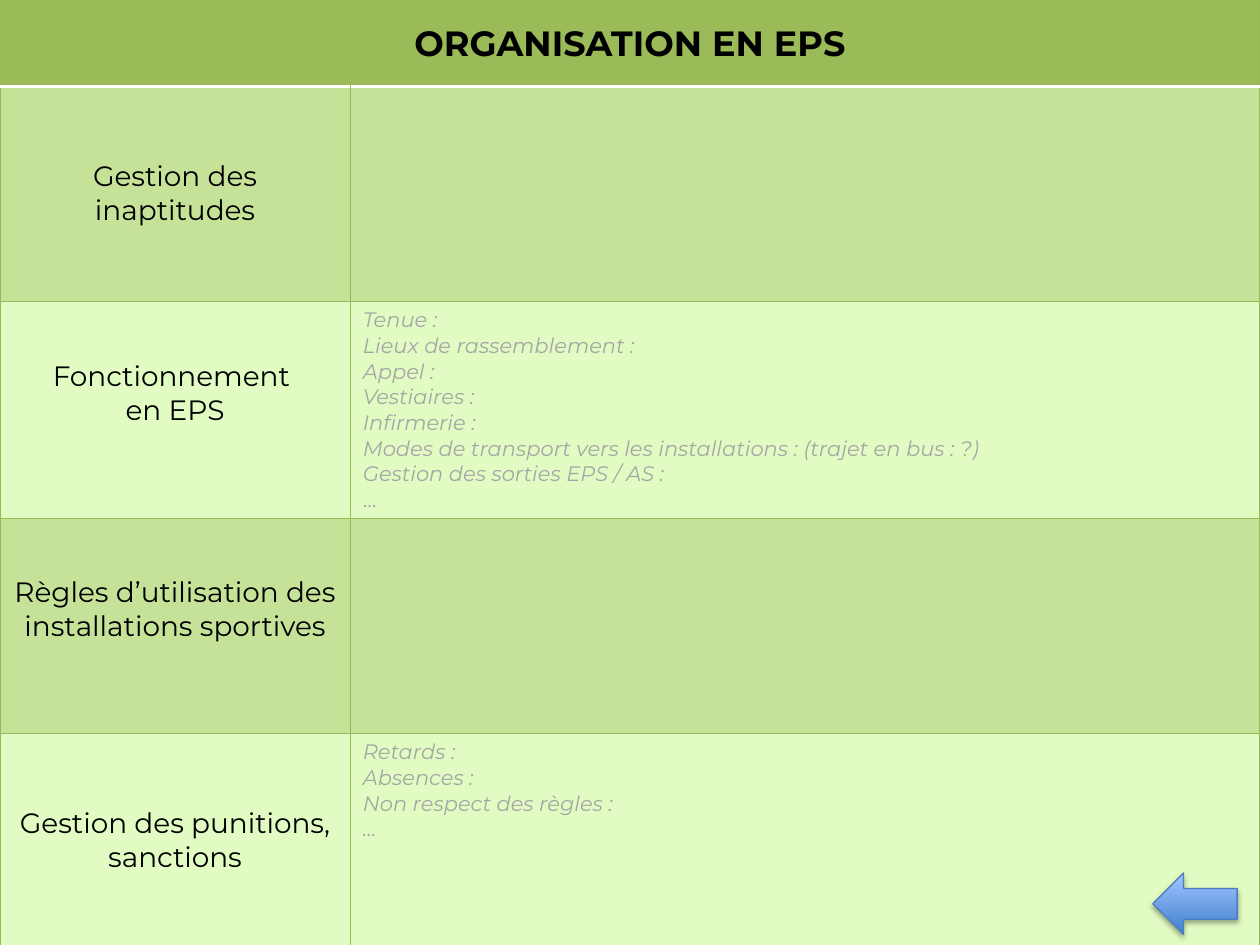
from lxml.etree import SubElement
from pptx import Presentation
from pptx.dml.color import RGBColor
from pptx.enum.shapes import MSO_SHAPE
from pptx.enum.text import MSO_ANCHOR, PP_ALIGN
from pptx.oxml.ns import qn
from pptx.util import Cm, Pt

COLORS = {
    "header": "9BBB59", "dark": "C6E198", "light": "E2FBC2",
    "border": "98B955", "white": "FFFFFF", "text": "000000", "hint": "A6A6A6",
    "arrow_low": "3F80CE", "arrow_high": "A4C4FF", "arrow_line": "4B7EBC",
}
TITLE = {"size": Pt(20), "bold": True, "italic": False}
TOPIC = {"size": Pt(16), "bold": False, "italic": False}
HINT = {"size": Pt(12), "bold": False, "italic": True}


def fill_cell(cell, lines, font_format, color, background, align, anchor):
    cell.fill.solid()
    cell.fill.fore_color.rgb = RGBColor.from_string(COLORS[background])
    cell.vertical_anchor = anchor
    cell.text = "\n".join(lines)
    for paragraph in cell.text_frame.paragraphs:
        paragraph.alignment = align
        for run in paragraph.runs:
            for key, value in font_format.items():
                setattr(run.font, key, value)
            run.font.name = "Montserrat"
            run.font.color.rgb = RGBColor.from_string(COLORS[color])


def add_border(cell, side, color, width):
    line = SubElement(cell._tc.get_or_add_tcPr(), qn(f"a:ln{side}"), w=str(Pt(width)))
    SubElement(SubElement(line, qn("a:solidFill")), qn("a:srgbClr"), val=COLORS[color])


topics = [
    (["Gestion des inaptitudes"], [], 0.13),
    (["Fonctionnement ", "en EPS"],
     ["Tenue :", "Lieux de rassemblement :", "Appel :", "Vestiaires :", "Infirmerie :",
      "Modes de transport vers les installations : (trajet en bus : ?)",
      "Gestion des sorties EPS / AS :", "…"], 0.81),
    (["Règles d’utilisation des installations sportives"], [], 0.81),
    (["Gestion des punitions, sanctions"],
     ["Retards :", "Absences :", "Non respect des règles :", "…"], 0.13),
]

prs = Presentation()
prs.slide_width, prs.slide_height = Cm(25.4), Cm(19.05)
slide = prs.slides.add_slide(prs.slide_layouts[6])

organisation = slide.shapes.add_table(
    len(topics) + 1, 2, Cm(0), Cm(0), Cm(25.4), Cm(19.05)).table
for column, width in zip(organisation.columns, (7.06, 18.34)):
    column.width = Cm(width)
for row_index, row in enumerate(organisation.rows):
    row.height = Cm(4.32 if row_index else 1.75)
    for cell in row.cells:
        for side in "LRTB":
            divider = (row_index, side) in ((0, "B"), (1, "T"))
            add_border(cell, side, "white" if divider else "border", 2 if divider else 0.75)

header = organisation.cell(0, 0)
header.merge(organisation.cell(0, 1))
fill_cell(header, ["ORGANISATION EN EPS"], TITLE, "text", "header",
          PP_ALIGN.CENTER, MSO_ANCHOR.MIDDLE)

for row_index, (topic, hints, bottom) in enumerate(topics, start=1):
    background = "dark" if row_index % 2 else "light"
    topic_cell, hint_cell = organisation.rows[row_index].cells
    fill_cell(topic_cell, topic, TOPIC, "text", background,
              PP_ALIGN.CENTER, MSO_ANCHOR.MIDDLE)
    topic_cell.margin_bottom = Cm(bottom)
    fill_cell(hint_cell, hints, HINT, "hint", background, PP_ALIGN.LEFT, MSO_ANCHOR.TOP)
    if hints and row_index == 2:
        hint_cell.text_frame.paragraphs[-1].runs[0].font.italic = False

back_arrow = slide.shapes.add_shape(
    MSO_SHAPE.LEFT_ARROW, Cm(23.24), Cm(17.6), Cm(1.7), Cm(1.24))
back_arrow.fill.gradient()
back_arrow.fill.gradient_angle = 90
for stop, color, position in zip(
        back_arrow.fill.gradient_stops, ("arrow_low", "arrow_high"), (0, 1)):
    stop.color.rgb = RGBColor.from_string(COLORS[color])
    stop.position = position
back_arrow.line.color.rgb = RGBColor.from_string(COLORS["arrow_line"])
back_arrow.line.width = Pt(0.75)
back_arrow.shadow.inherit = False
effects = back_arrow._element.spPr.find(qn("a:effectLst"))
shadow = SubElement(effects, qn("a:outerShdw"), blurRad=str(Pt(3.1)), dist=str(Pt(1.8)),
                    dir="5400000", rotWithShape="0")
shadow_color = SubElement(shadow, qn("a:srgbClr"), val=COLORS["text"])
SubElement(shadow_color, qn("a:alpha"), val="35000")

prs.save("out.pptx")
